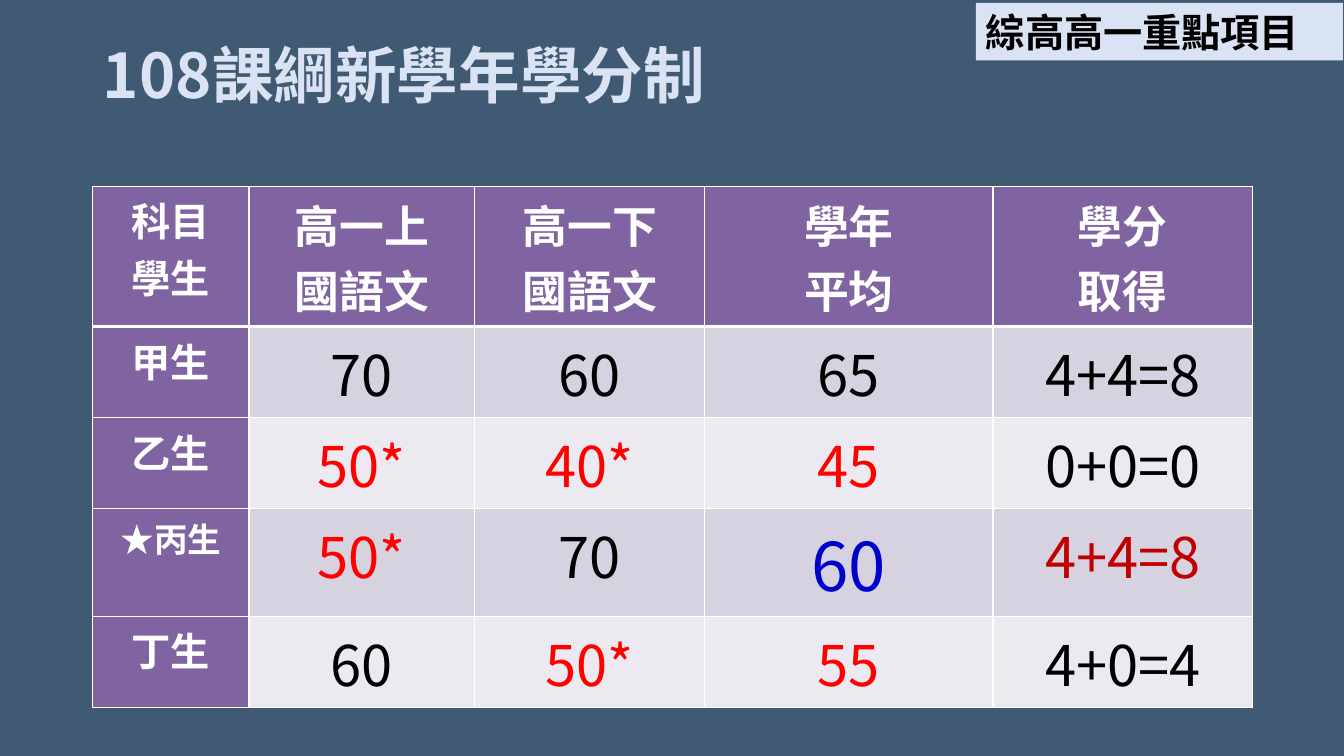
"""Build the slide on the school-year credit system with its grade table."""
from lxml import etree
from pptx import Presentation, util as u
from pptx.dml.color import RGBColor
from pptx.enum import shapes, text
from pptx.oxml.ns import qn

THEME = {
    "back": "405A74", "pale": "DAE3F3", "head": "8064A2", "white": "FFFFFF",
    "black": "000000", "red": "FF0000", "blue": "0000CC", "dark": "C00000",
    "bands": ("D7D2DF", "ECEAF0"),
    "sans": "Noto Sans CJK SC", "grid": "Noto Sans CJK TC",
    "title": 44, "tag": 28, "name": 28, "star": 24, "term": 32, "mark": 40, "key": 48,
}


def write(frame, words, face, size, color, bold, **form):
    """Fill a text frame and format each of its paragraphs."""
    frame.text = words
    for para in frame.paragraphs:
        for key, value in form.items():
            setattr(para, key, value)
        for run in para.runs:
            look = {"name": THEME[face], "size": u.Pt(THEME[size]), "bold": bold}
            for key, value in look.items():
                setattr(run.font, key, value)
            run.font.color.rgb = RGBColor.from_string(THEME[color])
            east = etree.SubElement(run._r.get_or_add_rPr(), qn("a:ea"))
            east.set("typeface", THEME[face])


def edge(cell, sides):
    """Draw white cell borders with the given widths in points."""
    props = cell._tc.get_or_add_tcPr()
    for spot, (side, width) in enumerate(sides.items()):
        line = etree.Element(qn("a:" + side), w=str(u.Pt(width)))
        fill = etree.SubElement(line, qn("a:solidFill"))
        etree.SubElement(fill, qn("a:srgbClr"), val=THEME["white"])
        props.insert(spot, line)


deck = Presentation()
deck.slide_width, deck.slide_height = u.Inches(13.33), u.Inches(7.5)
slide = deck.slides.add_slide(deck.slide_layouts[5])
slide.background.fill.solid()
slide.background.fill.fore_color.rgb = RGBColor.from_string(THEME["back"])

title = slide.shapes.title
place = {"left": 0.92, "top": 0.4, "width": 11.5, "height": 1.45}
for key, value in place.items():
    setattr(title, key, u.Inches(value))
frame = title.text_frame
write(frame, "108課綱新學年學分制", "sans", "title", "pale", True,
      alignment=text.PP_ALIGN.LEFT, line_spacing=0.9)
frame.vertical_anchor = text.MSO_ANCHOR.TOP
frame.auto_size = text.MSO_AUTO_SIZE.NONE

heads = ["科目\n學生", "高一上\n國語文", "高一下\n國語文", "學年\n平均", "學分\n取得"]
marks = [
    ["甲生", "70", "60", "65", "4+4=8"],
    ["乙生", "50*", "40*", "45", "0+0=0"],
    ["★丙生", "50*", "70", "60", "4+4=8"],
    ["丁生", "60", "50*", "55", "4+0=4"],
]
fails = {"50*", "40*", "45", "55"}
special = {(3, 0): ("star", "white"), (3, 3): ("key", "blue"), (3, 4): ("mark", "dark")}
wides = [1.55, 2.24, 2.28, 2.86, 2.57]
talls = [1.35, 0.85, 0.85, 1, 0.85]

table = slide.shapes.add_table(5, 5, u.Inches(0.92), u.Inches(1.85),
                               u.Inches(11.5), u.Inches(4.9)).table
for col, wide in zip(table.columns, wides):
    col.width = u.Inches(wide)
for row, tall in zip(table.rows, talls):
    row.height = u.Inches(tall)

pads = {"margin_left": 0.07, "margin_right": 0.07, "margin_top": 0.05, "margin_bottom": 0.05}
for r, line in enumerate([heads] + marks):
    for c, words in enumerate(line):
        cell = table.cell(r, c)
        for key, value in pads.items():
            setattr(cell, key, u.Inches(value))
        head = r == 0 or c == 0
        if head:
            size, color = "name" if c == 0 else "term", "white"
        else:
            size, color = "mark", "red" if words in fails else "black"
        size, color = special.get((r, c), (size, color))
        write(cell.text_frame, words, "grid", size, color, head,
              alignment=text.PP_ALIGN.CENTER)
        cell.fill.solid()
        shade = THEME["head"] if head else THEME["bands"][(r - 1) % 2]
        cell.fill.fore_color.rgb = RGBColor.from_string(shade)
        edge(cell, {"lnL": 1, "lnR": 1, "lnT": 3 if r == 1 else 1, "lnB": 3 if r == 0 else 1})

tag = slide.shapes.add_shape(shapes.MSO_SHAPE.RECTANGLE, u.Inches(9.68), u.Inches(0.03),
                             u.Inches(3.64), u.Inches(0.57))
tag.shadow.inherit = False
tag.fill.solid()
tag.fill.fore_color.rgb = RGBColor.from_string(THEME["pale"])
tag.line.fill.background()
write(tag.text_frame, "綜高高一重點項目", "sans", "tag", "black", True,
      alignment=text.PP_ALIGN.LEFT)
tag.text_frame.vertical_anchor = text.MSO_ANCHOR.TOP

deck.save("out.pptx")
